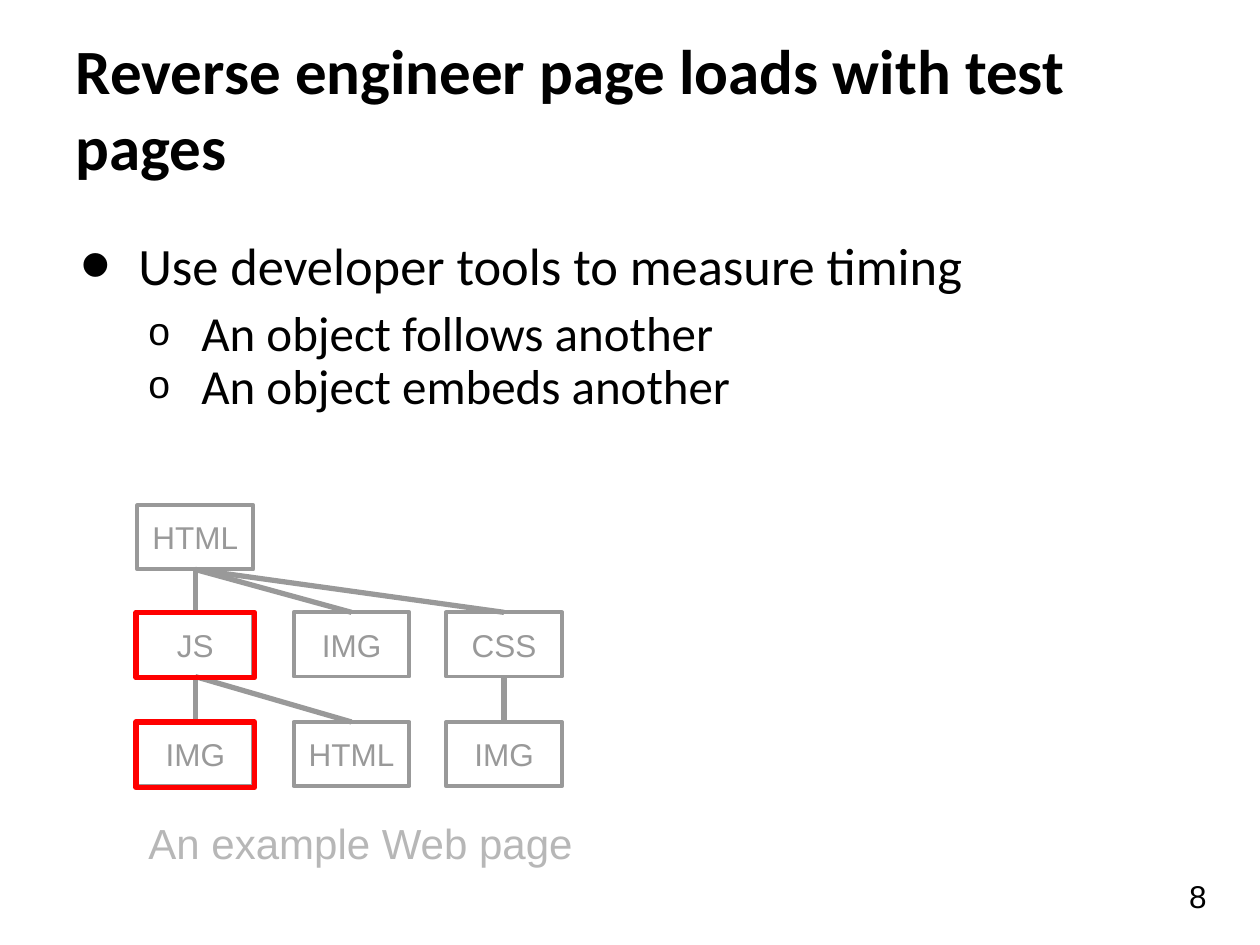
from dataclasses import dataclass
from typing import Optional

import pptx
import pptx.dml.color
import pptx.enum.shapes
import pptx.enum.text
import pptx.oxml
import pptx.oxml.ns
import pptx.util
from pptx.util import Inches

Color = pptx.dml.color.RGBColor
Align = pptx.enum.text.PP_ALIGN
Anchor = pptx.enum.text.MSO_ANCHOR


@dataclass(frozen=True)
class Theme:
    ink: str = "000000"
    grey: str = "999999"
    caption: str = "B7B7B7"
    accent: str = "FF0000"
    paper: str = "FFFFFF"
    heading: str = "Calibri"
    label: str = "Arial"
    title_size: float = 36
    bullet_size: float = 30
    sub_bullet_size: float = 28
    caption_size: float = 24
    label_size: float = 18
    box_line: float = 2.25
    link_line: float = 3


THEME = Theme()


@dataclass(frozen=True)
class Bullet:
    char: str
    percent: int
    margin: float
    hang: float


@dataclass(frozen=True)
class TextItem:
    text: str
    area: tuple[float, float, float, float]
    size: float
    font: str
    color: str
    before: float = 6
    bullet: Optional[Bullet] = None


@dataclass(frozen=True)
class Node:
    text: str
    column: int
    row: int
    highlighted: bool = False


BOX_WIDTH, BOX_HEIGHT = 0.92, 0.51
COLUMNS = (1.09, 2.33, 3.54)
ROWS = (4.01, 4.86, 5.73)
BOTTOM_SITE, TOP_SITE = 2, 0

NODES = {
    "root": Node("HTML", 0, 0),
    "script": Node("JS", 0, 1, True),
    "style": Node("CSS", 2, 1),
    "image": Node("IMG", 1, 1),
    "script_image": Node("IMG", 0, 2, True),
    "script_page": Node("HTML", 1, 2),
    "style_image": Node("IMG", 2, 2),
}
LINKS = (
    ("root", "script"),
    ("root", "image"),
    ("root", "style"),
    ("script", "script_page"),
    ("script", "script_image"),
    ("style", "style_image"),
)

DISC = Bullet("•", 167, 0.5, 0.46)
CIRCLE = Bullet("o", 80, 1, 0.42)
TEXTS = (
    TextItem("Use developer tools to measure timing", (0.5, 1.75, 9, 1.1),
             THEME.bullet_size, THEME.heading, THEME.ink, bullet=DISC),
    TextItem("An object follows another", (0.5, 2.3, 5.52, 0.51),
             THEME.sub_bullet_size, THEME.heading, THEME.ink, 4.8, CIRCLE),
    TextItem("An object embeds another", (0.5, 2.72, 5.52, 0.63),
             THEME.sub_bullet_size, THEME.heading, THEME.ink, 4.8, CIRCLE),
    TextItem("An example Web page", (1.08, 6.39, 3.71, 0.63),
             THEME.caption_size, THEME.label, THEME.caption),
    TextItem("8", (9.34, 6.86, 0.66, 0.64),
             THEME.label_size, THEME.label, THEME.ink),
)


def add_span(para, text: str, size: float, font: str, color: str, bold: bool = False) -> None:
    span = para.add_run()
    span.text = text
    span.font.size = pptx.util.Pt(size)
    span.font.name = font
    span.font.bold = bold
    span.font.color.rgb = Color.from_string(color)


def set_frame(frame, anchor, wrap: bool = True) -> None:
    frame.auto_size = pptx.enum.text.MSO_AUTO_SIZE.NONE
    frame.word_wrap = wrap
    frame.vertical_anchor = anchor
    frame.margin_left = frame.margin_right = Inches(0.1)
    frame.margin_top = frame.margin_bottom = Inches(0.1)


def set_bullet(para, bullet: Bullet) -> None:
    properties = para._p.get_or_add_pPr()
    properties.set("marL", str(Inches(bullet.margin)))
    properties.set("indent", str(-Inches(bullet.hang)))
    namespace = pptx.oxml.ns.nsdecls("a")
    for xml in (
        f'<a:buClr {namespace}><a:srgbClr val="{THEME.ink}"/></a:buClr>',
        f'<a:buSzPct {namespace} val="{bullet.percent * 1000}"/>',
        f'<a:buFont {namespace} typeface="{THEME.label}"/>',
        f'<a:buChar {namespace} char="{bullet.char}"/>',
    ):
        properties.append(pptx.oxml.parse_xml(xml))


def set_title(page, text: str) -> None:
    title = page.shapes.title
    title.left, title.top = Inches(0.5), Inches(0.3)
    title.width, title.height = Inches(9), Inches(1.25)
    set_frame(title.text_frame, Anchor.BOTTOM)
    para = title.text_frame.paragraphs[0]
    para.alignment = Align.LEFT
    add_span(para, text, THEME.title_size, THEME.heading, THEME.ink, True)


def add_text(page, item: TextItem) -> None:
    box = page.shapes.add_textbox(*map(Inches, item.area))
    set_frame(box.text_frame, Anchor.TOP)
    para = box.text_frame.paragraphs[0]
    para.space_before = pptx.util.Pt(item.before)
    if item.bullet:
        para.level = 1 if item.bullet is CIRCLE else 0
        set_bullet(para, item.bullet)
    add_span(para, item.text, item.size, item.font, item.color)


def add_box(page, node: Node, color: str, width: float, grow: float = 0):
    box = page.shapes.add_shape(
        pptx.enum.shapes.MSO_SHAPE.RECTANGLE,
        Inches(COLUMNS[node.column] - grow), Inches(ROWS[node.row]),
        Inches(BOX_WIDTH + 2 * grow), Inches(BOX_HEIGHT + grow),
    )
    box.shadow.inherit = False
    box.line.color.rgb = Color.from_string(color)
    box.line.width = pptx.util.Pt(width)
    return box


def add_node(page, node: Node):
    box = add_box(page, node, THEME.grey, THEME.box_line)
    box.fill.solid()
    box.fill.fore_color.rgb = Color.from_string(THEME.paper)
    set_frame(box.text_frame, Anchor.MIDDLE, False)
    para = box.text_frame.paragraphs[0]
    para.alignment = Align.CENTER
    add_span(para, node.text, THEME.label_size, THEME.label, THEME.grey)
    return box


def add_link(page, parent, child) -> None:
    link = page.shapes.add_connector(pptx.enum.shapes.MSO_CONNECTOR.STRAIGHT, 0, 0, 0, 0)
    link.begin_connect(parent, BOTTOM_SITE)
    link.end_connect(child, TOP_SITE)
    link.line.color.rgb = Color.from_string(THEME.grey)
    link.line.width = pptx.util.Pt(THEME.link_line)
    link._element.spPr.append(pptx.oxml.parse_xml(f'<a:effectLst {pptx.oxml.ns.nsdecls("a")}/>'))


def main() -> None:
    deck = pptx.Presentation()
    deck.slide_width, deck.slide_height = Inches(10), Inches(7.5)
    page = deck.slides.add_slide(deck.slide_layouts.get_by_name("Title Only"))
    set_title(page, "Reverse engineer page loads with test pages")
    boxes = {name: add_node(page, node) for name, node in NODES.items()}
    for parent, child in LINKS:
        add_link(page, boxes[parent], boxes[child])
    for node in NODES.values():
        if node.highlighted:
            add_box(page, node, THEME.accent, THEME.link_line, 0.01).fill.background()
    for item in TEXTS:
        add_text(page, item)
    deck.save("out.pptx")


if __name__ == "__main__":
    main()
